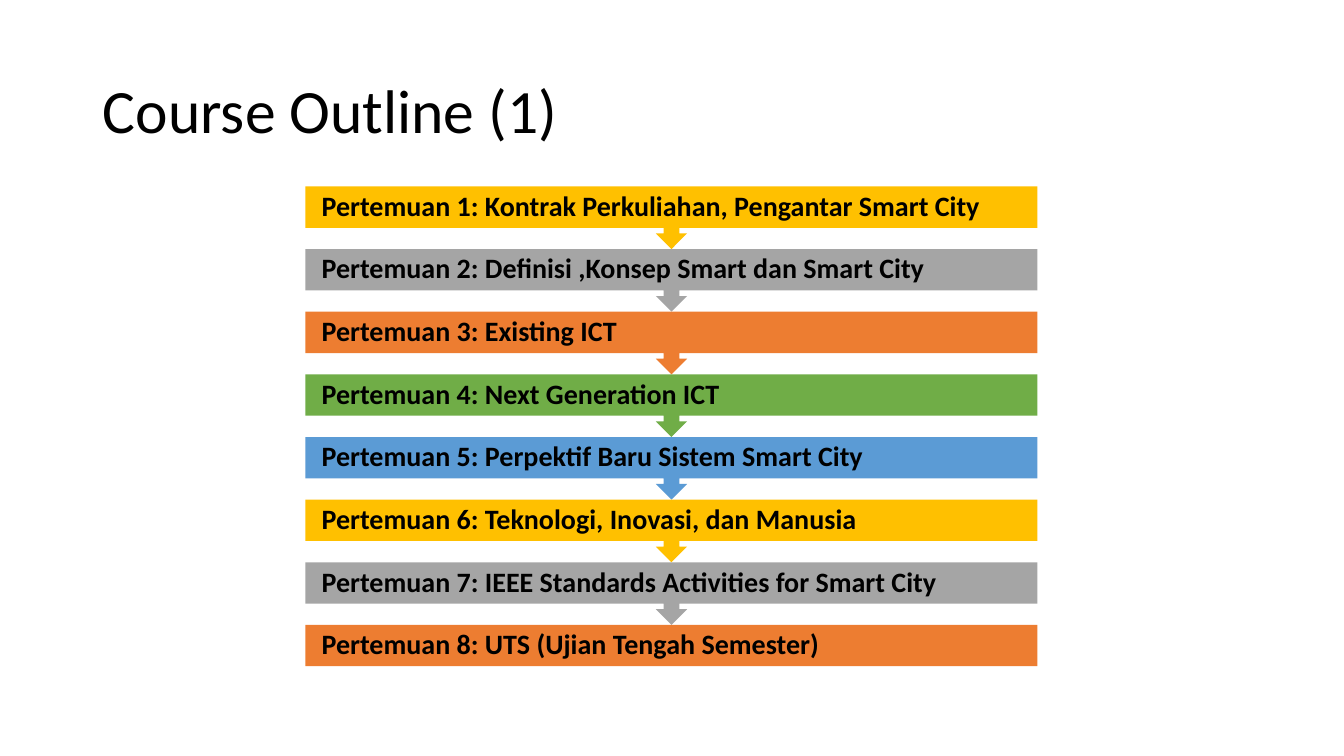
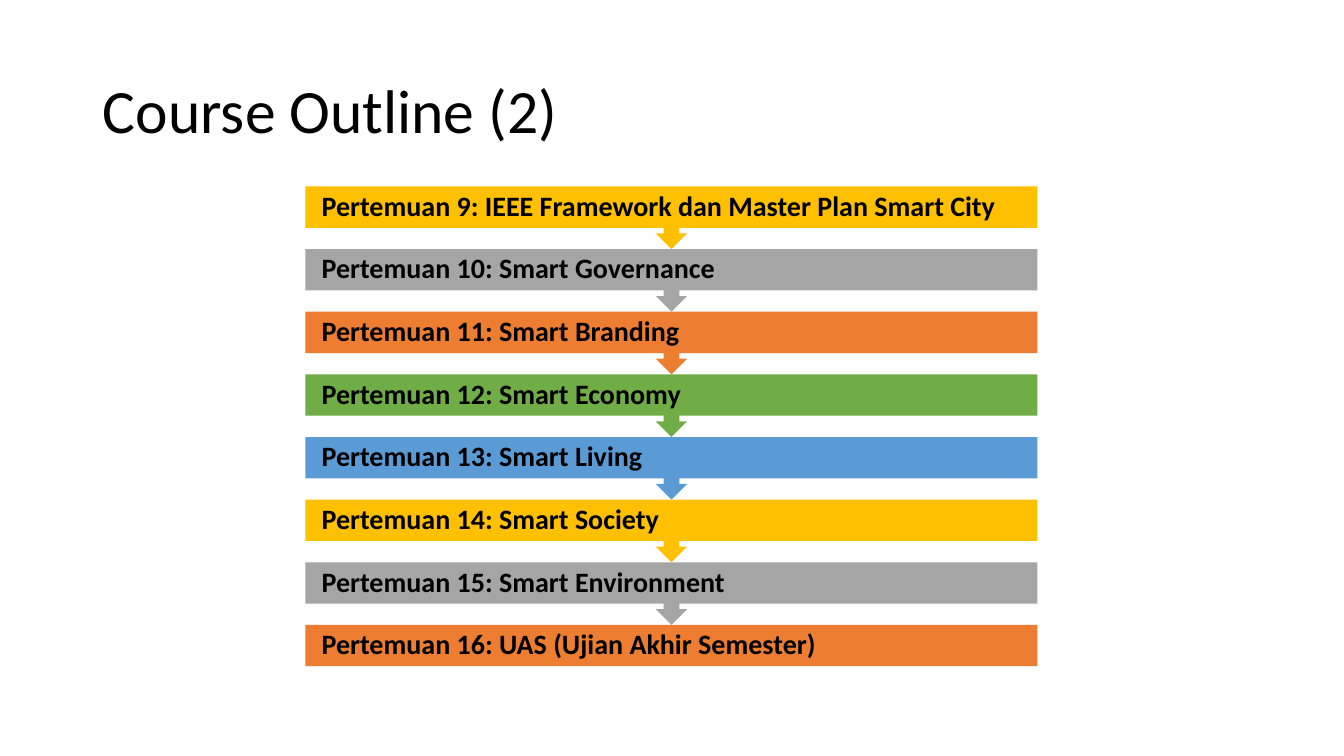
from dataclasses import dataclass

from pptx import Presentation
from pptx.dml.color import RGBColor
from pptx.enum import shapes, text
from pptx.util import Inches, Pt

OUTLINES = [
    ("Course Outline (1)", [
        "Pertemuan 1: Kontrak Perkuliahan, Pengantar Smart City",
        "Pertemuan 2: Definisi ,Konsep Smart dan Smart City",
        "Pertemuan 3: Existing ICT",
        "Pertemuan 4: Next Generation ICT",
        "Pertemuan 5: Perpektif Baru Sistem Smart City",
        "Pertemuan 6: Teknologi, Inovasi, dan Manusia",
        "Pertemuan 7: IEEE Standards Activities for Smart City",
        "Pertemuan 8: UTS (Ujian Tengah Semester)",
    ]),
    ("Course Outline (2)", [
        "Pertemuan 9: IEEE Framework dan Master Plan Smart City",
        "Pertemuan 10: Smart Governance",
        "Pertemuan 11: Smart Branding",
        "Pertemuan 12: Smart Economy",
        "Pertemuan 13: Smart Living",
        "Pertemuan 14: Smart Society",
        "Pertemuan 15: Smart Environment",
        "Pertemuan 16: UAS (Ujian Akhir Semester)",
    ]),
]


@dataclass(frozen=True)
class Theme:
    font: str = "Calibri"
    ink: str = "000000"
    steps: tuple = ("FFC000", "A5A5A5", "ED7D31", "70AD47", "5B9BD5")
    title_size: int = 44
    step_size: int = 20


THEME = Theme()
TITLE_BOX = [Inches(v) for v in (0.92, 0.4, 11.5, 1.45)]
FLOW_LEFT, FLOW_WIDTH = Inches(3.03), Inches(7.26)
FLOW_TOP, LAST_TOP = Inches(1.85), Inches(6.2)
BAR_HEIGHT = Inches(0.41)
BAR_INSET = Inches(0.16)


def write(frame, words, size, bold=False, inset=Inches(0.1)):
    frame.word_wrap = True
    frame.auto_size = text.MSO_AUTO_SIZE.NONE
    frame.vertical_anchor = text.MSO_ANCHOR.MIDDLE
    frame.margin_left = frame.margin_right = inset
    frame.margin_top = frame.margin_bottom = 0
    paragraph = frame.paragraphs[0]
    paragraph.alignment = text.PP_ALIGN.LEFT
    paragraph.line_spacing = 0.9
    run = paragraph.add_run()
    run.text = words
    run.font.name = THEME.font
    run.font.size = Pt(size)
    run.font.bold = bold
    run.font.color.rgb = RGBColor.from_string(THEME.ink)


def add_flow(slide, meetings):
    pitch = (LAST_TOP - FLOW_TOP) // (len(meetings) - 1)
    for index, meeting in enumerate(meetings):
        is_last = index == len(meetings) - 1
        kind = (shapes.MSO_SHAPE.RECTANGLE if is_last
                else shapes.MSO_SHAPE.DOWN_ARROW_CALLOUT)
        height = BAR_HEIGHT if is_last else pitch
        step = slide.shapes.add_shape(
            kind, FLOW_LEFT, FLOW_TOP + index * pitch, FLOW_WIDTH, height)
        if not is_last:
            step.adjustments[3] = BAR_HEIGHT / pitch
        step.shadow.inherit = False
        step.fill.solid()
        step.fill.fore_color.rgb = RGBColor.from_string(
            THEME.steps[index % len(THEME.steps)])
        step.line.fill.background()
        write(step.text_frame, meeting, THEME.step_size, bold=True,
              inset=BAR_INSET)


def place_title(title):
    title.left, title.top, title.width, title.height = TITLE_BOX


def main():
    deck = Presentation()
    deck.slide_width, deck.slide_height = Inches(13.33), Inches(7.5)
    layout = deck.slide_layouts.get_by_name("Title Only")
    place_title(layout.placeholders[0])
    for heading, meetings in OUTLINES:
        slide = deck.slides.add_slide(layout)
        write(slide.shapes.title.text_frame, heading, THEME.title_size)
        add_flow(slide, meetings)
    deck.save("out.pptx")


if __name__ == "__main__":
    main()
